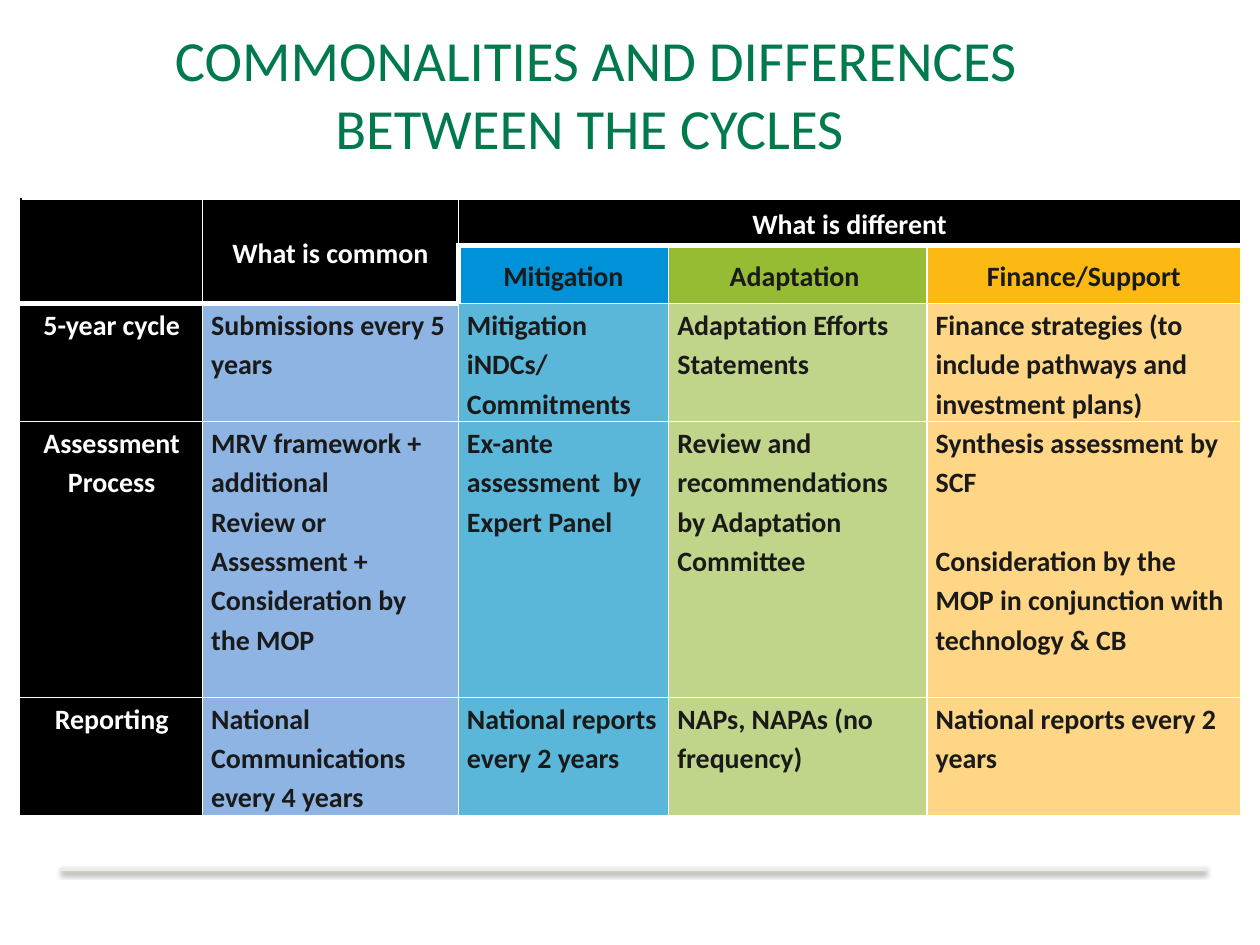
from lxml.etree import SubElement
from pptx import Presentation
from pptx.dml.color import RGBColor
from pptx.enum.shapes import MSO_CONNECTOR as Connector
from pptx.enum.text import MSO_ANCHOR as Anchor, MSO_AUTO_SIZE as AutoSize, PP_ALIGN as Align
from pptx.oxml.ns import qn
from pptx.util import Pt

FONT = "Calibri"
GREEN = RGBColor(0x00, 0x7A, 0x4D)
BLACK = RGBColor(0x00, 0x00, 0x00)
WHITE = RGBColor(0xFF, 0xFF, 0xFF)
INK = RGBColor(0x1A, 0x1A, 0x1A)
RULE = RGBColor(0xEE, 0xEC, 0xE1)
HEADER_FILLS = [BLACK, BLACK, RGBColor(0x00, 0x92, 0xD9),
                RGBColor(0x96, 0xBC, 0x33), RGBColor(0xFD, 0xB9, 0x13)]
BODY_FILLS = [BLACK, RGBColor(0x8E, 0xB4, 0xE3), RGBColor(0x5B, 0xB7, 0xD9),
              RGBColor(0xC1, 0xD5, 0x8A), RGBColor(0xFF, 0xD5, 0x86)]

COLUMN_WIDTHS = [103.7, 146.2, 120.2, 147.6, 179.3]
ROW_HEIGHTS = [26.6, 33.1, 67.5, 157.5, 67]
LINE_HEIGHT = 22.4
# Each newline starts a paragraph
CELL_TEXTS = [
    ["", "What is common", "What is different", "", ""],
    ["", "", "Mitigation", "Adaptation ", "Finance/Support"],
    ["5-year cycle", "Submissions every 5 years", "Mitigation iNDCs/ Commitments",
     "Adaptation Efforts Statements",
     "Finance strategies (to include pathways and investment plans)"],
    ["Assessment Process",
     "MRV framework + additional\nReview or Assessment +\nConsideration by the MOP",
     "Ex-ante assessment  by Expert Panel",
     "Review and recommendations by Adaptation Committee",
     "Synthesis assessment by SCF\n"
     "Consideration by the MOP in conjunction with technology & CB"],
    ["Reporting", "National Communications every 4 years",
     "National reports every 2 years", "NAPs, NAPAs (no frequency)",
     "National reports every 2 years"],
]


def write_text(text_frame, text, size=16, color=INK, bold=False,
               align=Align.LEFT, line_spacing=1.0, gap=0):
    """Write one paragraph per line of text, with a gap between paragraphs."""
    for index, line in enumerate(text.split("\n")):
        paragraph = text_frame.add_paragraph() if index else text_frame.paragraphs[0]
        paragraph.alignment = align
        paragraph.line_spacing = line_spacing
        paragraph.space_before = Pt(gap if index else 0)
        run = paragraph.add_run()
        run.text = line
        run.font.name = FONT
        run.font.size = Pt(size)
        run.font.bold = bold
        run.font.color.rgb = color


def set_borders(cell, row, column):
    """Draw thin white borders, heavy ones around the headers."""
    heavy = {
        "L": (row, column) == (1, 2),
        "R": (row, column) == (1, 1),
        "T": row == 1 or (row == 2 and column < 2),
        "B": row == 0 or (row == 1 and column < 2),
    }
    properties = cell._tc.get_or_add_tcPr()
    for side, is_heavy in heavy.items():
        color = BLACK if side == "L" and column == 0 else WHITE
        border = SubElement(properties, qn(f"a:ln{side}"), w=str(Pt(3 if is_heavy else 1)))
        fill = SubElement(border, qn("a:solidFill"))
        SubElement(fill, qn("a:srgbClr"), val=str(color))


def add_title(slide, left, top, width, height):
    title = slide.shapes.title
    title.left, title.top, title.width, title.height = map(Pt, (left, top, width, height))
    frame = title.text_frame
    frame.word_wrap = True
    frame.auto_size = AutoSize.NONE
    frame.vertical_anchor = Anchor.TOP
    write_text(frame, "COMMONALITIES AND DIFFERENCES BETWEEN THE CYCLES ",
               size=32.4, color=GREEN, align=Align.CENTER)


def add_cycle_table(slide, left, top):
    table = slide.shapes.add_table(
        len(ROW_HEIGHTS), len(COLUMN_WIDTHS), Pt(left), Pt(top),
        Pt(sum(COLUMN_WIDTHS)), Pt(sum(ROW_HEIGHTS))).table
    table.first_row = table.horz_banding = False
    for column, width in zip(table.columns, COLUMN_WIDTHS):
        column.width = Pt(width)
    for row, height in zip(table.rows, ROW_HEIGHTS):
        row.height = Pt(height)

    # Merged headers
    for first, last in (((0, 0), (1, 0)), ((0, 1), (1, 1)), ((0, 2), (0, 4))):
        table.cell(*first).merge(table.cell(*last))

    for row, texts in enumerate(CELL_TEXTS):
        is_header = row < 2
        fills = [BLACK] * 5 if row == 0 else HEADER_FILLS if row == 1 else BODY_FILLS
        for column, text in enumerate(texts):
            cell = table.cell(row, column)
            set_borders(cell, row, column)
            cell.fill.solid()
            cell.fill.fore_color.rgb = fills[column]
            cell.margin_left = cell.margin_right = Pt(5)
            cell.margin_top = cell.margin_bottom = Pt(0)
            cell.vertical_anchor = Anchor.MIDDLE if is_header else Anchor.TOP
            if text:
                write_text(
                    cell.text_frame, text, bold=True, line_spacing=1.15,
                    color=WHITE if fills[column] == BLACK else INK,
                    align=Align.CENTER if is_header or column == 0 else Align.LEFT,
                    gap=LINE_HEIGHT if (row, column) == (3, 4) else 0)


def add_footer_rule(slide, left, top, width):
    line = slide.shapes.add_connector(
        Connector.STRAIGHT, Pt(left), Pt(top), Pt(left + width), Pt(top))
    line.line.color.rgb = RULE
    line.line.width = Pt(2)
    # Soft shadow below the line
    effects = SubElement(line._element.spPr, qn("a:effectLst"))
    shadow = SubElement(effects, qn("a:outerShdw"), blurRad=str(Pt(3.1)),
                        dist=str(Pt(1.6)), dir="5400000", rotWithShape="0")
    color = SubElement(shadow, qn("a:srgbClr"), val=str(BLACK))
    SubElement(color, qn("a:alpha"), val="38000")


def main():
    presentation = Presentation()
    presentation.slide_width, presentation.slide_height = Pt(720), Pt(540)
    slide = presentation.slides.add_slide(presentation.slide_layouts[5])
    add_title(slide, 34.5, 10.8, 612, 66.2)
    add_footer_rule(slide, 34.5, 496.8, 654.5)
    add_cycle_table(slide, 12, 113.8)
    presentation.save("out.pptx")


if __name__ == "__main__":
    main()
